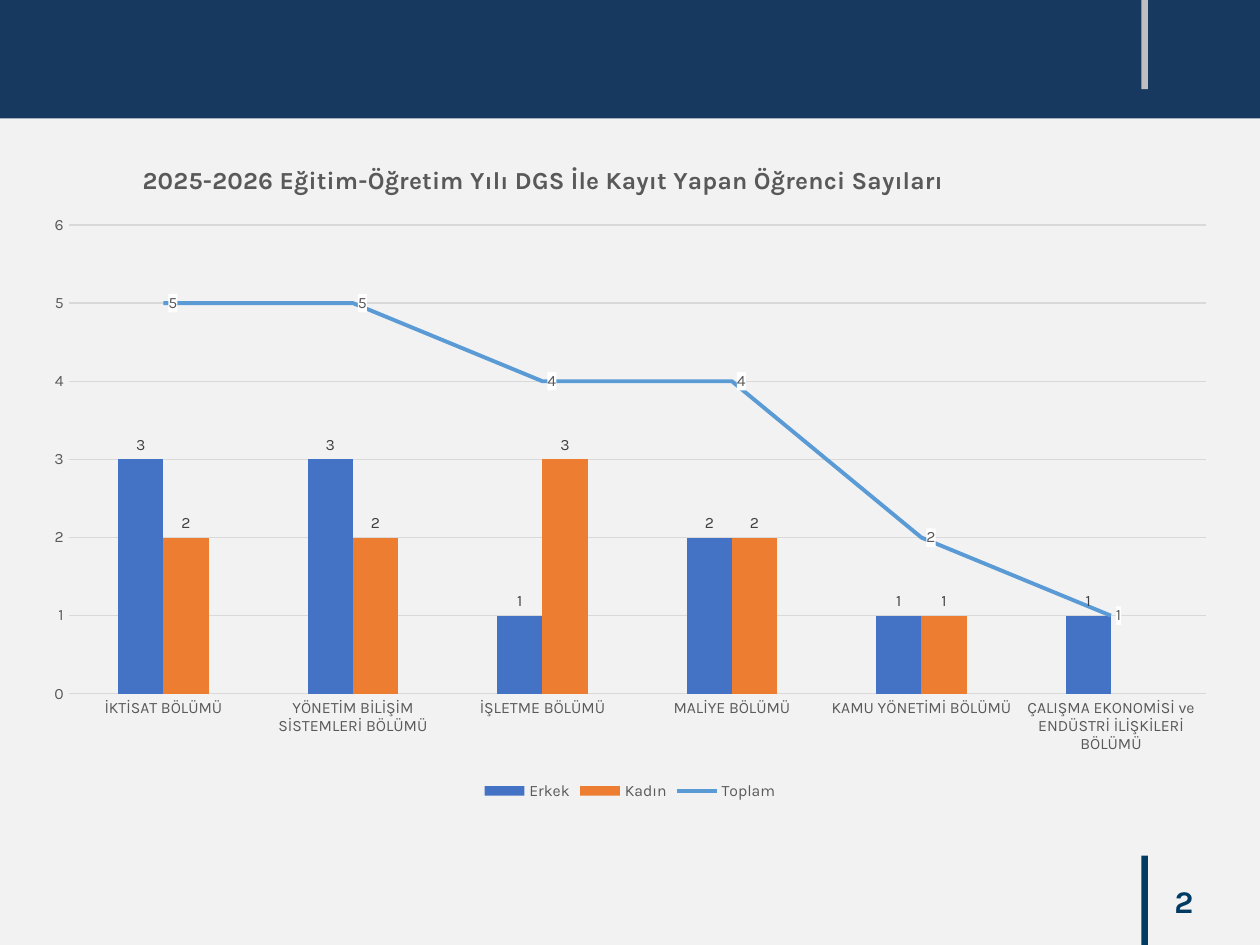
from pptx import Presentation
from pptx.chart.data import CategoryChartData
from pptx.dml.color import RGBColor
from pptx.enum.chart import XL_CHART_TYPE, XL_LABEL_POSITION, XL_LEGEND_POSITION, XL_MARKER_STYLE, XL_TICK_MARK
from pptx.enum.shapes import MSO_SHAPE
from pptx.enum.text import MSO_ANCHOR, PP_ALIGN
from pptx.oxml import parse_xml
from pptx.oxml.ns import nsdecls, qn
from pptx.util import Cm, Pt

COLUMNS = XL_CHART_TYPE.COLUMN_CLUSTERED
ABOVE, RIGHT = XL_LABEL_POSITION.OUTSIDE_END, XL_LABEL_POSITION.RIGHT
NO_TICK = XL_TICK_MARK.NONE

PALE = RGBColor(0xF2, 0xF2, 0xF2)
NAVY = RGBColor(0x17, 0x39, 0x60)
DEEP_BLUE = RGBColor(0x00, 0x3B, 0x64)
SILVER = RGBColor(0xBF, 0xBF, 0xBF)
GRID = RGBColor(0xD9, 0xD9, 0xD9)
GRAY = RGBColor(0x59, 0x59, 0x59)
DARK_GRAY = RGBColor(0x40, 0x40, 0x40)
BLUE = RGBColor(0x44, 0x72, 0xC4)
ORANGE = RGBColor(0xED, 0x7D, 0x31)
SKY = RGBColor(0x5B, 0x9B, 0xD5)
FONT = "Karla"

TITLE = "2025-2026 Eğitim-Öğretim Yılı DGS İle Kayıt Yapan Öğrenci Sayıları"
DEPARTMENTS = [
    "İKTİSAT BÖLÜMÜ",
    "YÖNETİM BİLİŞİM SİSTEMLERİ BÖLÜMÜ",
    "İŞLETME BÖLÜMÜ",
    "MALİYE BÖLÜMÜ",
    "KAMU YÖNETİMİ BÖLÜMÜ",
    "ÇALIŞMA EKONOMİSİ ve ENDÜSTRİ İLİŞKİLERİ BÖLÜMÜ",
]
COUNTS = {
    "Erkek": (3, 3, 1, 2, 1, 1),
    "Kadın": (2, 2, 3, 2, 1, None),
    "Toplam": (5, 5, 4, 4, 2, 1),
}
BANDS = [
    (0, 0, 25.4, 2.39, NAVY),
    (23.01, 17.25, 0.13, 1.8, DEEP_BLUE),
    (23.01, 0, 0.13, 1.8, SILVER),
]


def style(font, size=9, color=GRAY, bold=False):
    font.name = FONT
    font.size = Pt(size)
    font.bold = bold
    font.color.rgb = color


def write(frame, text, align=PP_ALIGN.CENTER, **look):
    para = frame.paragraphs[0]
    para.alignment = align
    span = para.add_run()
    span.text = text
    style(span.font, **look)


def add_band(page, left, top, width, height, color):
    band = page.shapes.add_shape(MSO_SHAPE.RECTANGLE, Cm(left), Cm(top), Cm(width), Cm(height))
    band.shadow.inherit = False
    band.fill.solid()
    band.fill.fore_color.rgb = color
    band.line.fill.background()


def layout(target=None, **places):
    target_xml = f'<c:layoutTarget val="{target}"/>' if target else ""
    modes = "".join(f'<c:{key}Mode val="edge"/>' for key in "xy")
    values = "".join(f'<c:{key} val="{value}"/>' for key, value in places.items())
    return parse_xml(
        f'<c:layout {nsdecls("c")}><c:manualLayout>{target_xml}{modes}{values}'
        "</c:manualLayout></c:layout>"
    )


def place(parent, new_layout, index):
    for old in parent.findall(qn("c:layout")):
        parent.remove(old)
    parent.insert(index, new_layout)


def turn_last_series_into_line(chart):
    bars = chart.plots[0]
    total = list(bars.series)[-1]._element
    bar_chart = total.getparent()
    for flag in total.findall(qn("c:invertIfNegative")):
        total.remove(flag)
    line_chart = parse_xml(
        f'<c:lineChart {nsdecls("c")}><c:grouping val="standard"/><c:varyColors val="0"/>'
        '<c:marker val="1"/></c:lineChart>'
    )
    line_chart.insert(2, total)
    for axis in bar_chart.findall(qn("c:axId")):
        line_chart.append(parse_xml(f'<c:axId {nsdecls("c")} val="{axis.get("val")}"/>'))
    bar_chart.addnext(line_chart)


def label(series, position, color):
    labels = series.data_labels
    labels.show_value = True
    labels.position = position
    style(labels.font, color=color)
    return labels


def add_chart(page):
    data = CategoryChartData()
    data.categories = DEPARTMENTS
    for name, values in COUNTS.items():
        data.add_series(name, values)
    chart = page.shapes.add_chart(COLUMNS, Cm(0.61), Cm(2.82), Cm(24.18), Cm(13.41), data).chart
    style(chart.font)

    write(chart.chart_title.text_frame, TITLE, size=14, bold=True)
    chart.chart_title.include_in_layout = False
    place(chart.chart_title._element, layout(x=0.09, y=0.03), 1)

    chart.has_legend = True
    chart.legend.position = XL_LEGEND_POSITION.BOTTOM
    chart.legend.include_in_layout = False
    style(chart.legend.font)

    for axis in (chart.category_axis, chart.value_axis):
        axis.major_tick_mark = axis.minor_tick_mark = NO_TICK
        style(axis.tick_labels.font)
    chart.category_axis.format.line.color.rgb = GRID
    chart.category_axis.format.line.width = Pt(0.75)
    scale = chart.value_axis
    scale.minimum_scale, scale.maximum_scale, scale.major_unit = 0, 6, 1
    scale.format.line.fill.background()
    scale.major_gridlines.format.line.color.rgb = GRID
    scale.major_gridlines.format.line.width = Pt(0.75)

    turn_last_series_into_line(chart)
    bars, lines = chart.plots
    bars.vary_by_categories = False
    bars.gap_width, bars.overlap = 219, 0
    for series, color in zip(bars.series, (BLUE, ORANGE)):
        series.format.fill.solid()
        series.format.fill.fore_color.rgb = color
        label(series, ABOVE, DARK_GRAY)

    total = lines.series[0]
    total.smooth = False
    total.marker.style = XL_MARKER_STYLE.NONE
    total.format.line.color.rgb = SKY
    total.format.line.width = Pt(2.25)
    labels = label(total, RIGHT, GRAY)
    labels._element.find(qn("c:txPr")).addprevious(parse_xml(
        f'<c:spPr {nsdecls("c", "a")}><a:solidFill><a:srgbClr val="FFFFFF"/></a:solidFill></c:spPr>'
    ))
    plot_area = bars._element.getparent()
    place(plot_area, layout("inner", x=0.032, y=0.128, w=0.948, h=0.705), 0)


def main():
    deck = Presentation()
    deck.slide_width, deck.slide_height = Cm(25.4), Cm(19.05)
    page = deck.slides.add_slide(deck.slide_layouts[6])
    page.background.fill.solid()
    page.background.fill.fore_color.rgb = PALE
    for band in BANDS:
        add_band(page, *band)

    number = page.shapes.add_textbox(Cm(18.59), Cm(17.65), Cm(5.72), Cm(1.02)).text_frame
    number.word_wrap = True
    number.vertical_anchor = MSO_ANCHOR.MIDDLE
    write(number, "2", align=PP_ALIGN.RIGHT, size=18, color=DEEP_BLUE, bold=True)

    add_chart(page)
    deck.save("out.pptx")


if __name__ == "__main__":
    main()
